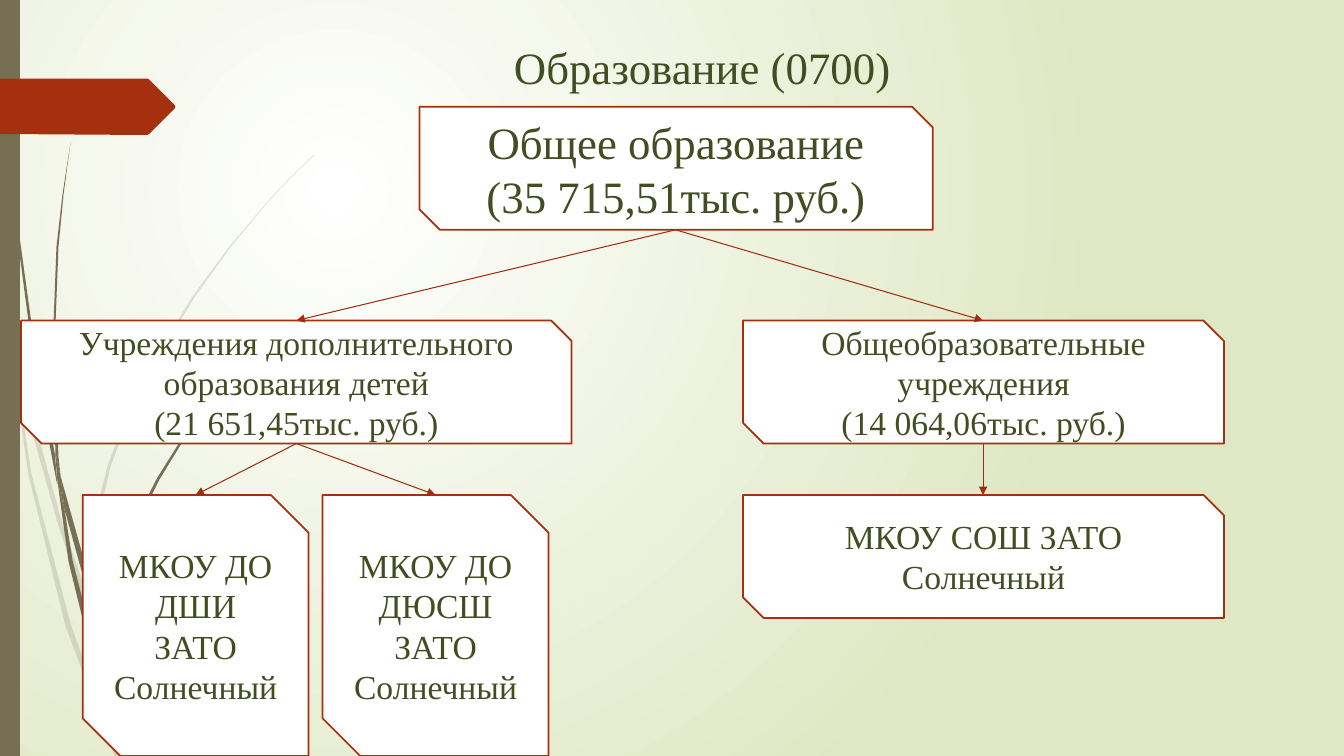
import pptx
import pptx.dml.color
import pptx.enum.dml
import pptx.enum.shapes
import pptx.enum.text
import pptx.oxml
import pptx.oxml.ns
import pptx.util

PX = 9144
FONT = "Times New Roman"
WHITE = pptx.dml.color.RGBColor(0xFF, 0xFF, 0xFF)
PALE_GREEN = pptx.dml.color.RGBColor(0xDF, 0xE8, 0xC4)
OLIVE = pptx.dml.color.RGBColor(0x42, 0x4D, 0x22)
TAUPE = pptx.dml.color.RGBColor(0x76, 0x6F, 0x54)
RUST = pptx.dml.color.RGBColor(0xA5, 0x30, 0x10)
DARK_RUST = pptx.dml.color.RGBColor(0x9E, 0x2E, 0x0F)
NAMESPACE = pptx.oxml.ns.nsdecls("a")

presentation = pptx.Presentation()
presentation.slide_width = 1333 * PX
presentation.slide_height = 750 * PX
slide = presentation.slides.add_slide(presentation.slide_layouts[6])
shapes = slide.shapes


def add_outline(points, color):
    builder = shapes.build_freeform(*points[0], scale=PX)
    builder.add_line_segments(points[1:], close=True)
    shape = builder.convert_to_shape()
    shape.shadow.inherit = False
    shape.fill.solid()
    shape.fill.fore_color.rgb = color
    shape.line.fill.background()
    return shape


def write_text(shape, lines, size):
    frame = shape.text_frame
    frame.word_wrap = True
    frame.vertical_anchor = pptx.enum.text.MSO_ANCHOR.MIDDLE
    frame.text = "\n".join(lines)
    for paragraph in frame.paragraphs:
        paragraph.alignment = pptx.enum.text.PP_ALIGN.CENTER
        for run in paragraph.runs:
            run.font.name = FONT
            run.font.size = pptx.util.Pt(size)
            run.font.color.rgb = OLIVE


background = slide.background.fill
background.gradient()
for stop, position, color in zip(background.gradient_stops, (0, 1), (WHITE, PALE_GREEN)):
    stop.position = position
    stop.color.rgb = color
linear = next(slide.element.iter(pptx.oxml.ns.qn("a:lin")))
linear.getparent().replace(linear, pptx.oxml.parse_xml(
    f'<a:path {NAMESPACE} path="circle">'
    '<a:fillToRect l="50000" t="50000" r="100000" b="100000"/></a:path>'))

pale_blades = [
    [(11, 350), (9, 322), (0, 282), (0, 299), (10, 344)],
    [(58, 522), (84, 599), (85, 586), (62, 520), (14, 345), (17, 376)],
    [(92, 607), (88, 596), (88, 610), (123, 694), (150, 751), (155, 751), (127, 692)],
    [(119, 751), (124, 751), (105, 711)],
    [(93, 683), (70, 619), (31, 469), (17, 376), (11, 350), (28, 470), (65, 621),
     (92, 693), (101, 714), (99, 707)],
    [(84, 599), (87, 646), (93, 683), (96, 692), (105, 711), (103, 706), (91, 646),
     (88, 610), (88, 608)],
    [(88, 584), (97, 517), (110, 462), (132, 404), (160, 349), (193, 295), (229, 245),
     (268, 198), (290, 175), (312, 154), (312, 153), (289, 175), (268, 197), (228, 244),
     (191, 294), (158, 348), (130, 403), (107, 461), (93, 517), (85, 584), (85, 586),
     (88, 596)],
    [(101, 714), (114, 751), (119, 751)],
    [(88, 608), (88, 596), (85, 586), (84, 599)],
    [(96, 692), (93, 683), (99, 707), (101, 714), (119, 751), (105, 711)],
]
dark_blades = [
    [(7, 110), (17, 233), (33, 355), (56, 477), (57, 481), (55, 457), (55, 453), (36, 355),
     (19, 232), (8, 109), (5, 48), (4, 0), (3, 0), (4, 48)],
    [(88, 592), (106, 645), (106, 631), (93, 590), (60, 472), (64, 505)],
    [(113, 649), (110, 641), (111, 656), (132, 708), (152, 749), (157, 749), (136, 706)],
    [(110, 691), (98, 657), (72, 556), (64, 505), (57, 477), (68, 557), (93, 659),
     (111, 708), (117, 722), (116, 717)],
    [(60, 472), (58, 453), (54, 349), (58, 245), (63, 193), (70, 141), (62, 193), (56, 245),
     (52, 349), (55, 449)],
    [(133, 749), (136, 749), (122, 719)],
    [(57, 477), (64, 505), (60, 472), (55, 449), (55, 453)],
    [(111, 633), (115, 592), (125, 552), (140, 512), (158, 476), (180, 440), (205, 406),
     (231, 374), (245, 359), (261, 344), (260, 344), (245, 358), (231, 373), (204, 405),
     (178, 439), (156, 474), (137, 511), (122, 551), (111, 591), (106, 631), (110, 641)],
    [(117, 722), (127, 749), (131, 749)],
    [(106, 645), (110, 691), (116, 706), (122, 719), (121, 716), (111, 656), (109, 651)],
    [(106, 645), (111, 656), (110, 641), (106, 631)],
    [(116, 706), (110, 691), (116, 717), (117, 722), (130, 749), (133, 749), (122, 719)],
]
for blade in pale_blades:
    shape = add_outline(blade, TAUPE)
    for color in shape.element.spPr.iter(pptx.oxml.ns.qn("a:srgbClr")):
        color.append(pptx.oxml.parse_xml(f'<a:alpha {NAMESPACE} val="20000"/>'))
for blade in dark_blades:
    add_outline(blade, TAUPE)

side_bar = [(0, 0), (20, 0), (20, 750), (0, 750)]
page_tag = [(0, 78), (146, 78), (148, 79), (173, 104), (174, 106), (173, 108),
            (148, 133), (146, 134), (0, 133)]
add_outline(side_bar, TAUPE)
add_outline(page_tag, RUST)

title = shapes.add_textbox(209 * PX, 31 * PX, 975 * PX, 71 * PX)
write_text(title, ["Образование (0700)"], 32)

boxes = {
    "total": (416, 106, 509, 122, 32, ["Общее образование", "(35 715,51тыс. руб.)"]),
    "extra": (21, 318, 546, 122, 24,
              ["Учреждения дополнительного образования детей", "(21 651,45тыс. руб.)"]),
    "general": (737, 318, 477, 122, 24,
                ["Общеобразовательные учреждения", "(14 064,06тыс. руб.)"]),
    "arts": (82, 491, 224, 259, 24, ["МКОУ ДО ДШИ ЗАТО Солнечный"]),
    "sports": (320, 491, 224, 259, 24, ["МКОУ ДО ДЮСШ ЗАТО Солнечный"]),
    "school": (737, 491, 477, 122, 24, ["МКОУ СОШ ЗАТО Солнечный"]),
}
for left, top, width, height, size, lines in boxes.values():
    box = shapes.add_shape(pptx.enum.shapes.MSO_SHAPE.SNIP_2_DIAG_RECTANGLE,
                           left * PX, top * PX, width * PX, height * PX)
    box.shadow.inherit = False
    box.fill.solid()
    box.fill.fore_color.rgb = WHITE
    box.line.color.rgb = RUST
    box.line.width = pptx.util.Pt(1.25)
    write_text(box, lines, size)

arrows = [("total", "extra"), ("total", "general"), ("extra", "arts"),
          ("extra", "sports"), ("general", "school")]
for parent, child in arrows:
    parent_left, parent_top, parent_width, parent_height = boxes[parent][:4]
    child_left, child_top, child_width = boxes[child][:3]
    arrow = shapes.add_connector(
        pptx.enum.shapes.MSO_CONNECTOR.STRAIGHT,
        (parent_left + parent_width // 2) * PX, (parent_top + parent_height) * PX,
        (child_left + child_width // 2) * PX, child_top * PX)
    arrow.line.color.rgb = DARK_RUST
    arrow.line.width = pptx.util.Pt(0.75)
    arrow.line._get_or_add_ln().append(
        pptx.oxml.parse_xml(f'<a:tailEnd {NAMESPACE} type="triangle"/>'))
    arrow.element.spPr.append(pptx.oxml.parse_xml(f"<a:effectLst {NAMESPACE}/>"))

presentation.save("out.pptx")
